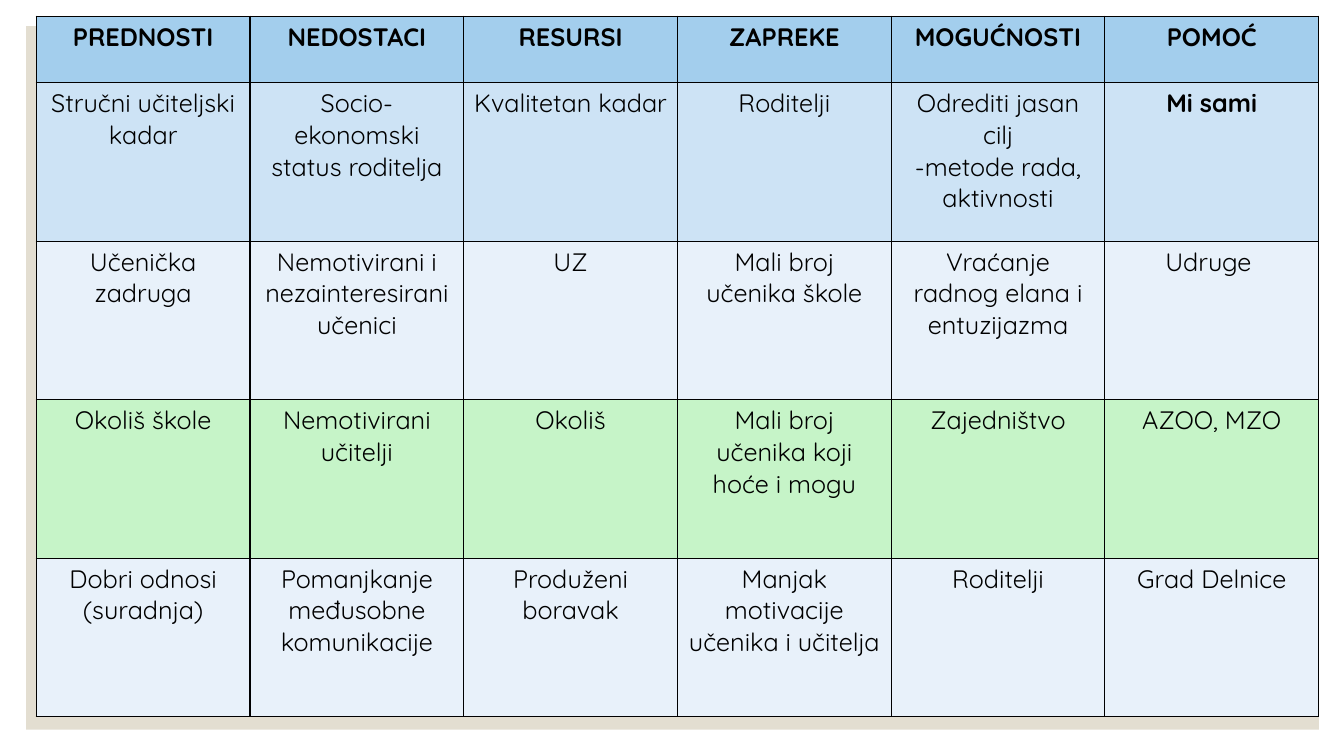
import pptx
import pptx.dml.color
import pptx.enum.shapes
import pptx.enum.text
import pptx.oxml
import pptx.oxml.ns
import pptx.util

Inches = pptx.util.Inches
FONT = "Quicksand"
COLORS = {
    "sand": "E3DED1",
    "head": "A3CEED",
    "blue": "CDE3F5",
    "pale": "E8F1FA",
    "green": "C6F4C8",
    "ink": "000000",
}
HEADS = ["PREDNOSTI", "NEDOSTACI", "RESURSI", "ZAPREKE", "MOGUĆNOSTI", "POMOĆ"]
# Each row: fill colour and cell texts
ROWS = [
    ("head", HEADS),
    ("blue", ["Stručni učiteljski kadar", "Socio-ekonomski status roditelja",
              "Kvalitetan kadar", "Roditelji",
              "Odrediti jasan cilj\n-metode rada, aktivnosti", "Mi sami"]),
    ("pale", ["Učenička zadruga", "Nemotivirani i nezainteresirani učenici",
              "UZ", "Mali broj učenika škole",
              "Vraćanje radnog elana i entuzijazma", "Udruge "]),
    ("green", ["Okoliš škole", "Nemotivirani učitelji", "Okoliš",
               "Mali broj učenika koji hoće i mogu", "Zajedništvo", "AZOO, MZO"]),
    ("pale", ["Dobri odnosi\n(suradnja)", "Pomanjkanje međusobne komunikacije",
              "Produženi boravak", "Manjak motivacije učenika i učitelja",
              "Roditelji", "Grad Delnice"]),
]
BOLD = {*HEADS, "Mi sami"}


def paint(fill, color):
    fill.solid()
    fill.fore_color.rgb = pptx.dml.color.RGBColor.from_string(COLORS[color])


def write(frame, text, size=18, bold=False, color="ink"):
    frame.word_wrap = True
    frame.text = text
    for para in frame.paragraphs:
        para.alignment = pptx.enum.text.PP_ALIGN.CENTER
        for run in para.runs:
            run.font.name = FONT
            run.font.size = pptx.util.Pt(size)
            run.font.bold = bold
            paint(run.font.fill, color)


def frame_cell(cell, color="ink", width=1):
    props = cell._tc.get_or_add_tcPr()
    space = pptx.oxml.ns.nsdecls("a")
    for side in "LRTB":
        props.append(pptx.oxml.parse_xml(
            f'<a:ln{side} {space} w="{pptx.util.Pt(width)}"><a:solidFill>'
            f'<a:srgbClr val="{COLORS[color]}"/></a:solidFill></a:ln{side}>'))


def add_back(slide, left, top, width, height):
    # Sand panel behind the table
    panel = slide.shapes.add_shape(
        pptx.enum.shapes.MSO_SHAPE.RECTANGLE,
        Inches(left), Inches(top), Inches(width), Inches(height))
    panel.shadow.inherit = False
    panel.line.fill.background()
    paint(panel.fill, "sand")


def add_grid(slide, left, top, width, height, head=0.66):
    # Table with a low header row and equal rows below
    grid = slide.shapes.add_table(
        len(ROWS), len(HEADS),
        Inches(left), Inches(top), Inches(width), Inches(height)).table
    for col in grid.columns:
        col.width = Inches(width / len(HEADS))
    for i, (color, texts) in enumerate(ROWS):
        grid.rows[i].height = Inches((height - head) / (len(ROWS) - 1) if i else head)
        for j, text in enumerate(texts):
            cell = grid.cell(i, j)
            frame_cell(cell)
            paint(cell.fill, color)
            write(cell.text_frame, text, bold=text in BOLD)


def main():
    deck = pptx.Presentation()
    deck.slide_width, deck.slide_height = Inches(13.33), Inches(7.5)
    slide = deck.slides.add_slide(deck.slide_layouts[6])
    add_back(slide, 0.26, 0.26, 12.82, 6.98)
    add_grid(slide, 0.36, 0.16, 12.72, 6.95)
    deck.save("out.pptx")


if __name__ == "__main__":
    main()
